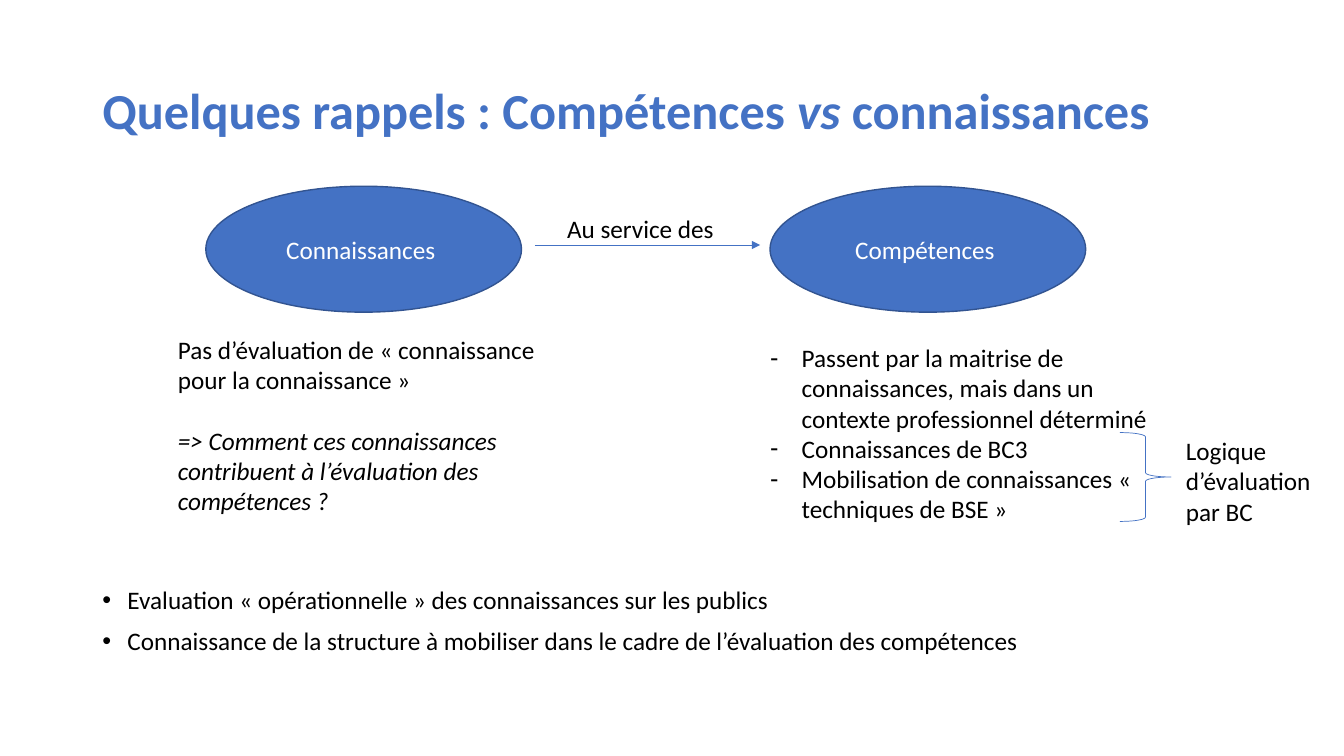
from pptx import Presentation
from pptx.util import Pt
from pptx.dml.color import RGBColor
from pptx.enum.shapes import MSO_CONNECTOR, MSO_SHAPE
from pptx.enum.text import MSO_ANCHOR, PP_ALIGN
from pptx.oxml.ns import qn
from lxml.etree import SubElement

COLORS = {"blue": "4472C4", "outline": "325491", "white": "FFFFFF", "black": "000000"}
FONT = "Calibri"

TITLE_BOX = (66, 28.8, 828, 104.4)
TITLE_RUNS = [("Quelques rappels : Compétences ", False), ("vs", True), (" connaissances", False)]

ELLIPSES = [("Connaissances ", 147), ("Compétences ", 550)]
ELLIPSE_TOP, ELLIPSE_WIDTH, ELLIPSE_HEIGHT = 133, 225.5, 90
ARROW = (382, 175, 543, 175)
BRACE_BOX = (800, 309, 36.5, 63.5)

PLAIN_TEXTS = [
    ((398, 149, 128, 29), ["Au service des"]),
    ((120, 235, 290, 138), ["Pas d’évaluation de « connaissance pour la connaissance »"]),
    ((840, 307.5, 105, 73), ["Logique d’évaluation par BC"]),
]
QUESTION = "=> Comment ces connaissances contribuent à l’évaluation des compétences ?"
BULLET_LISTS = [
    ((543, 241, 290, 160), "-", 22.5, 1, 0, [
        "Passent par la maitrise de connaissances, mais dans un contexte professionnel déterminé",
        "Connaissances de BC3",
        "Mobilisation de connaissances « techniques de BSE »",
    ]),
    ((66, 416, 828, 70), "•", 18, 0.9, 10, [
        "Evaluation « opérationnelle » des connaissances sur les publics",
        "Connaissance de la structure à mobiliser dans le cadre de l’évaluation des compétences",
    ]),
]


def color(name):
    return RGBColor.from_string(COLORS[name])


def style(paragraph, size=18, color_name="black"):
    paragraph.font.name = FONT
    paragraph.font.size = Pt(size)
    paragraph.font.color.rgb = color(color_name)


def add_text(slide, box, lines):
    frame = slide.shapes.add_textbox(*map(Pt, box)).text_frame
    frame.word_wrap = True
    frame.text = "\n".join(lines)
    for paragraph in frame.paragraphs:
        style(paragraph)
    return frame


def add_bullet(paragraph, character, indent):
    properties = paragraph._p.get_or_add_pPr()
    properties.set("marL", str(Pt(indent)))
    properties.set("indent", str(-Pt(indent)))
    SubElement(properties, qn("a:buFont")).set("typeface", "Arial")
    SubElement(properties, qn("a:buChar")).set("char", character)


def add_shape(slide, kind, box, line_color, line_width):
    shape = slide.shapes.add_shape(kind, *map(Pt, box))
    shape.shadow.inherit = False
    shape.line.color.rgb = color(line_color)
    shape.line.width = Pt(line_width)
    return shape


def add_title(slide):
    frame = add_text(slide, TITLE_BOX, [])
    frame.vertical_anchor = MSO_ANCHOR.MIDDLE
    paragraph = frame.paragraphs[0]
    style(paragraph, 36, "blue")
    paragraph.font.bold = True
    paragraph.line_spacing = 0.9
    for text, italic in TITLE_RUNS:
        run = paragraph.add_run()
        run.text = text
        run.font.italic = italic


def add_ellipses(slide):
    for label, left in ELLIPSES:
        box = (left, ELLIPSE_TOP, ELLIPSE_WIDTH, ELLIPSE_HEIGHT)
        ellipse = add_shape(slide, MSO_SHAPE.OVAL, box, "outline", 1)
        ellipse.fill.solid()
        ellipse.fill.fore_color.rgb = color("blue")
        ellipse.text_frame.text = label
        ellipse.text_frame.vertical_anchor = MSO_ANCHOR.MIDDLE
        paragraph = ellipse.text_frame.paragraphs[0]
        paragraph.alignment = PP_ALIGN.CENTER
        style(paragraph, color_name="white")


def add_arrow(slide):
    arrow = slide.shapes.add_connector(MSO_CONNECTOR.STRAIGHT, *map(Pt, ARROW))
    arrow.line.color.rgb = color("blue")
    arrow.line.width = Pt(0.5)
    SubElement(arrow.line._get_or_add_ln(), qn("a:tailEnd")).set("type", "triangle")
    SubElement(arrow._element.spPr, qn("a:effectLst"))


def add_texts(slide):
    frames = [add_text(slide, box, lines) for box, lines in PLAIN_TEXTS]
    question = frames[1].add_paragraph()
    question.text = QUESTION
    style(question)
    question.font.italic = True
    question.space_before = Pt(22)
    for box, character, indent, line_spacing, space_before, lines in BULLET_LISTS:
        for paragraph in add_text(slide, box, lines).paragraphs:
            paragraph.line_spacing = line_spacing
            paragraph.space_before = Pt(space_before)
            add_bullet(paragraph, character, indent)


def main():
    presentation = Presentation()
    presentation.slide_width, presentation.slide_height = Pt(960), Pt(540)
    slide = presentation.slides.add_slide(presentation.slide_layouts[6])
    add_title(slide)
    add_ellipses(slide)
    add_arrow(slide)
    add_texts(slide)
    brace = add_shape(slide, MSO_SHAPE.RIGHT_BRACE, BRACE_BOX, "blue", 0.5)
    brace.fill.background()
    presentation.save("out.pptx")


if __name__ == "__main__":
    main()
